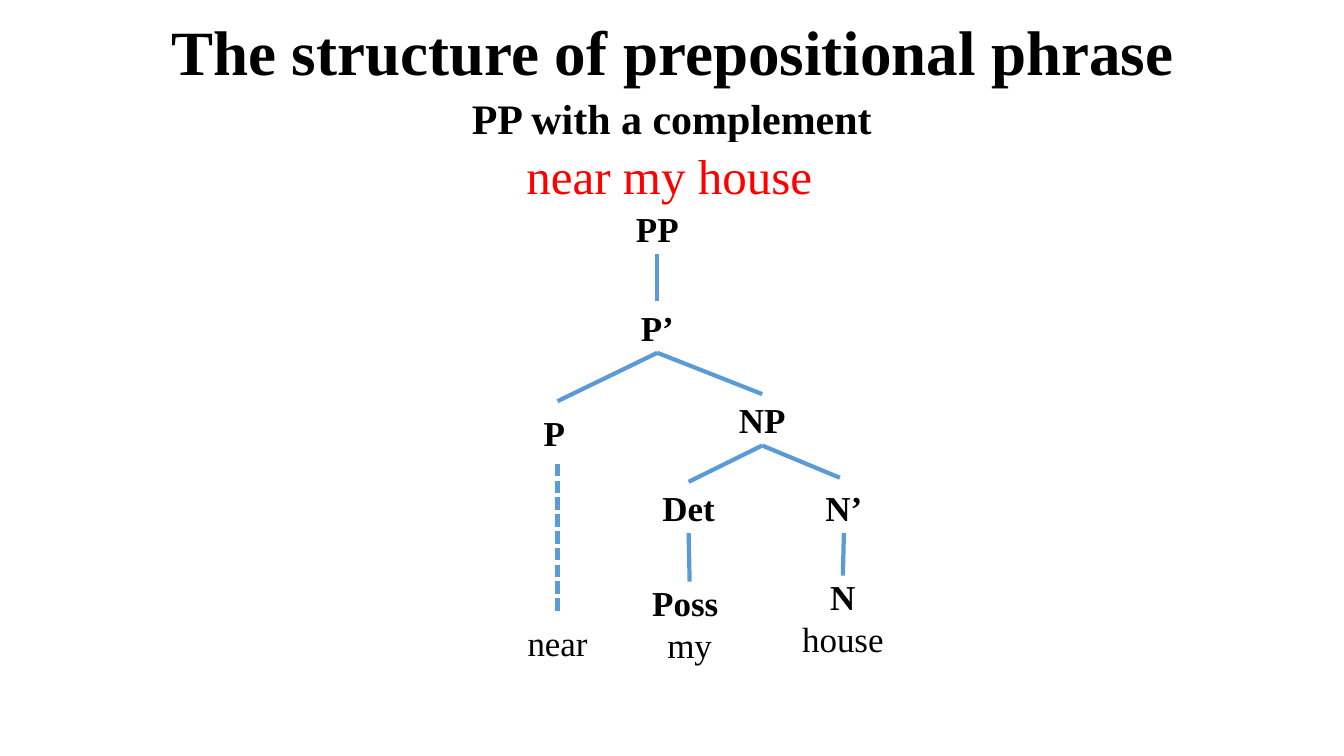
"""Build a slide with the syntax tree of a prepositional phrase."""
from lxml.etree import SubElement
from pptx import Presentation
from pptx.dml.color import RGBColor
from pptx.enum.dml import MSO_LINE
from pptx.enum.shapes import MSO_CONNECTOR, MSO_SHAPE
from pptx.enum.text import MSO_ANCHOR, PP_ALIGN
from pptx.oxml.ns import qn
from pptx.util import Inches, Pt

FONT = "Times New Roman"
COLORS = {"text": "000000", "phrase": "FF0000", "branch": "5B9BD5", "paper": "FFFFFF"}

TITLE = "The structure of prepositional phrase"
SUBTITLE = "PP with a complement"
PHRASE = "near my house"

# label, word, centre x, top, width, height
NODES = {
    "PP": ("PP", "", 6.52, 2.01, 0.87, 0.51),
    "P-bar": ("P’", "", 6.52, 2.99, 0.87, 0.51),
    "P": ("P ", "", 5.53, 3.98, 1.11, 0.62),
    "NP": ("NP", "", 7.56, 3.91, 0.87, 0.51),
    "Det": ("Det", "", 6.83, 4.78, 0.87, 0.51),
    "N-bar": ("N’", "", 8.37, 4.78, 0.87, 0.51),
    "Poss": ("Poss ", "my", 6.84, 5.77, 1.3, 0.83),
    "N": ("N", "house", 8.36, 5.71, 1.3, 0.83),
    "near": ("", "near", 5.53, 6.06, 1.11, 0.63),
}

# parent, child, dashed, shift of the lower end
BRANCHES = [
    ("PP", "P-bar", False, (0, 0)),
    ("P-bar", "P", False, (0, 0)),
    ("P-bar", "NP", False, (0, 0)),
    ("NP", "Det", False, (0, 0)),
    ("NP", "N-bar", False, (-0.04, -0.04)),
    ("Det", "Poss", False, (0, 0)),
    ("N-bar", "N", False, (0, 0)),
    ("P", "near", True, (0, 0)),
]


def color(name):
    return RGBColor.from_string(COLORS[name])


def write(shape, lines, size, ink="text", anchor=MSO_ANCHOR.MIDDLE, spacing=None):
    frame = shape.text_frame
    frame.word_wrap = True
    frame.vertical_anchor = anchor
    frame.text = "\n".join(text for text, bold in lines)
    for paragraph, (text, bold) in zip(frame.paragraphs, lines):
        paragraph.alignment = PP_ALIGN.CENTER
        paragraph.line_spacing = spacing
        font = paragraph.runs[0].font
        font.name, font.size, font.bold = FONT, Pt(size), bold
        font.color.rgb = color(ink)


def add_text(slide, box, lines, size, **style):
    write(slide.shapes.add_textbox(*map(Inches, box)), lines, size, **style)


def add_heading(slide):
    add_text(slide, (0.92, 0.2, 11.5, 0.7), [(TITLE, True)], 45, spacing=0.9)
    add_text(slide, (0.48, 0.93, 12.37, 5.95), [(SUBTITLE, True)], 30,
             anchor=MSO_ANCHOR.TOP, spacing=0.9)
    phrase = slide.shapes.add_shape(
        MSO_SHAPE.RECTANGLE, *map(Inches, (4.55, 1.41, 4.18, 0.65)))
    phrase.shadow.inherit = False
    phrase.fill.solid()
    phrase.fill.fore_color.rgb = color("paper")
    phrase.line.fill.background()
    write(phrase, [(PHRASE, False)], 35, ink="phrase")


def add_node(slide, label, word, center, top, width, height):
    lines = [(text, bold) for text, bold in ((label, True), (word, False)) if text]
    add_text(slide, (center - width / 2, top, width, height), lines, 25)


def add_branch(slide, parent, child, dashed, shift):
    _, _, start_x, parent_top, _, parent_height = NODES[parent]
    _, _, end_x, end_y, _, _ = NODES[child]
    ends = (start_x, parent_top + parent_height, end_x + shift[0], end_y + shift[1])
    branch = slide.shapes.add_connector(MSO_CONNECTOR.STRAIGHT, *map(Inches, ends))
    branch.line.color.rgb = color("branch")
    branch.line.width = Pt(3)
    if dashed:
        branch.line.dash_style = MSO_LINE.SQUARE_DOT
    SubElement(branch._element.spPr, qn("a:effectLst"))


def main():
    deck = Presentation()
    deck.slide_width, deck.slide_height = Inches(13.33), Inches(7.5)
    slide = deck.slides.add_slide(deck.slide_layouts[6])
    add_heading(slide)
    for node in NODES.values():
        add_node(slide, *node)
    for branch in BRANCHES:
        add_branch(slide, *branch)
    deck.save("out.pptx")


if __name__ == "__main__":
    main()
